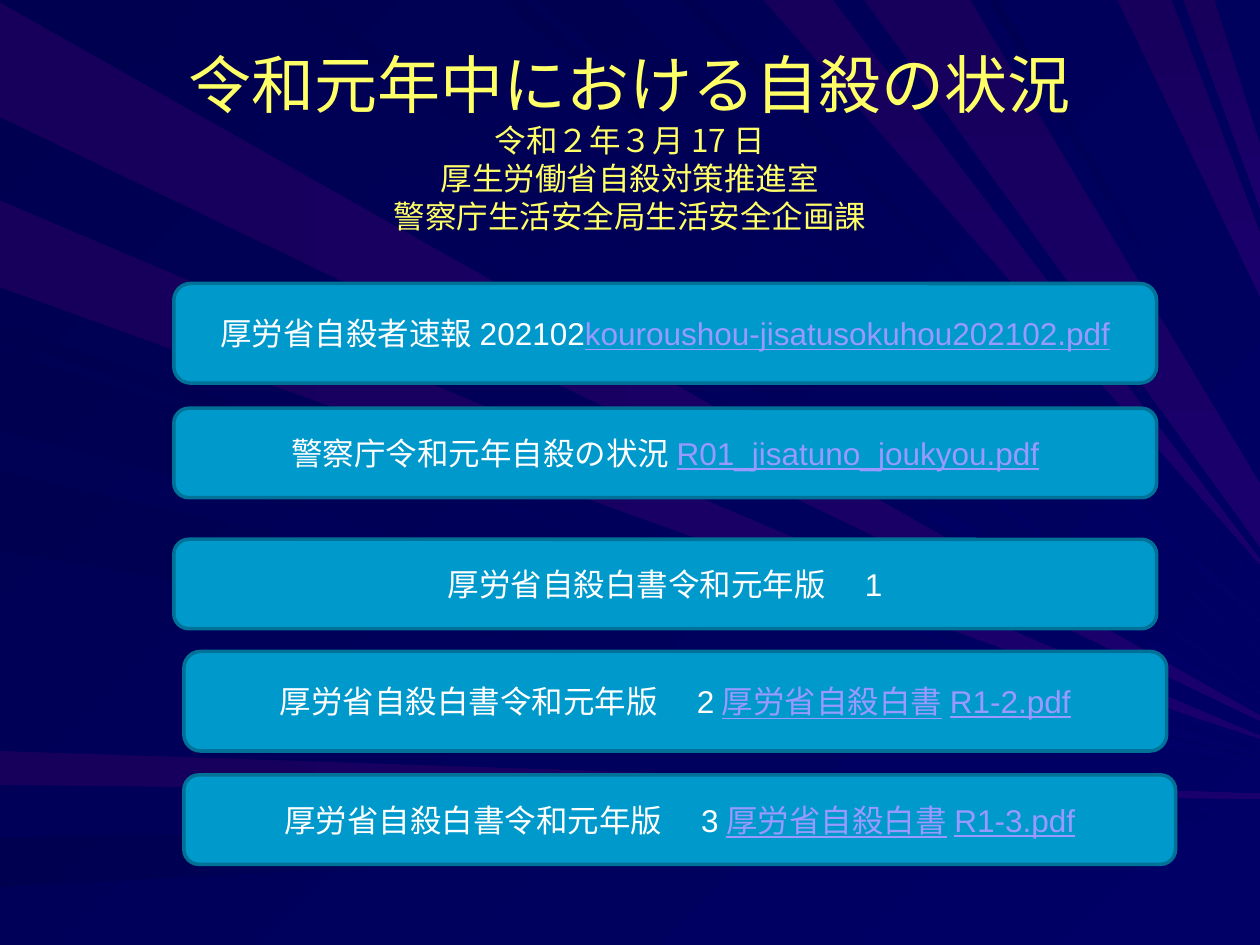
import pptx
import pptx.dml.color
import pptx.enum.shapes
import pptx.enum.text
import pptx.oxml.ns
import pptx.util
from lxml import etree

RGBColor = pptx.dml.color.RGBColor
Inches = pptx.util.Inches
Pt = pptx.util.Pt

NAVY = RGBColor.from_string("000066")
DARK_NAVY = RGBColor.from_string("000050")
PURPLE = RGBColor.from_string("1A006C")
DARK_PURPLE = RGBColor.from_string("16005B")
YELLOW = RGBColor.from_string("FFFF66")
WHITE = RGBColor.from_string("FFFFFF")
LINK = RGBColor.from_string("9999FF")
BUTTON = RGBColor.from_string("0099CC")
BUTTON_EDGE = RGBColor.from_string("007197")

LATIN_FONT = "Arial"
JAPANESE_FONT = "Noto Sans CJK JP"
SLIDE_WIDTH = 10
SLIDE_HEIGHT = 7.5

RAY_GROUPS = [
    {"edge": "left", "spread": 0.02, "colors": (DARK_PURPLE, PURPLE), "angle": 0,
     "rays": [(0.02, 0.93, 5.7), (1.59, 2.28, 5.86), (5.96, 6.23, 6.32)]},
    {"edge": "left", "spread": 0.02, "colors": (DARK_NAVY, NAVY), "angle": 45,
     "rays": [(2.58, 2.7, 5.89), (2.78, 3.42, 6), (3.74, 4.37, 6.05), (6.65, 7.04, 6.47)]},
    {"edge": "top", "spread": 0.02, "colors": (DARK_NAVY, NAVY), "angle": 45,
     "rays": [(0.26, 1.01, 5.63), (2.25, 2.47, 5.5), (3.98, 4.16, 5.18),
              (4.26, 4.92, 4.93), (5.4, 5.52, 4.63), (7.85, 7.92, 3.57)]},
    {"edge": "top", "spread": 0.02, "colors": (DARK_PURPLE, PURPLE), "angle": 90,
     "rays": [(6.06, 6.61, 4.46)]},
    {"edge": "top", "spread": 0.25, "colors": (DARK_PURPLE, PURPLE), "angle": 90,
     "rays": [(6.86, 7.7, 4.09), (8.87, 9.3, 2.1), (9.39, 9.64, 1.4)]},
]

TITLE_LINES = [
    ("令和元年中における自殺の状況", 36),
    ("令和２年３月17日", 18),
    ("厚生労働省自殺対策推進室", 18),
    ("警察庁生活安全局生活安全企画課", 18),
]
LINE_HEIGHT = 1.2

BUTTONS = [
    ((1.38, 2.25, 7.8, 0.79), "厚労省自殺者速報202102", "kouroushou-jisatusokuhou202102.pdf"),
    ((1.38, 3.24, 7.8, 0.71), "警察庁令和元年自殺の状況", "R01_jisatuno_joukyou.pdf"),
    ((1.38, 4.28, 7.8, 0.71), "厚労省自殺白書令和元年版　1", ""),
    ((1.46, 5.17, 7.8, 0.79), "厚労省自殺白書令和元年版　2", "厚労省自殺白書R1-2.pdf"),
    ((1.46, 6.15, 7.87, 0.71), "厚労省自殺白書令和元年版　3", "厚労省自殺白書R1-3.pdf"),
]


def set_fill(fill, colors, angle):
    fill.gradient()
    fill.gradient_angle = -angle % 360
    for stop, color in zip(fill.gradient_stops, colors):
        stop.color.rgb = color


def add_ray(slide, group, near, far, tip):
    if group["edge"] == "left":
        base = [(0, far), (0, near)]
    else:
        base = [(near, 0), (far, 0)]
    tips = [(SLIDE_WIDTH, tip - group["spread"]), (SLIDE_WIDTH, tip + group["spread"])]
    corners = [(Inches(x), Inches(y)) for x, y in base + tips]
    builder = slide.shapes.build_freeform(*corners[0])
    builder.add_line_segments(corners[1:])
    ray = builder.convert_to_shape()
    ray.shadow.inherit = False
    ray.line.fill.background()
    set_fill(ray.fill, group["colors"], group["angle"])


def add_run(paragraph, text, color, **formats):
    run = paragraph.add_run()
    run.text = text
    for name, value in formats.items():
        setattr(run.font, name, value)
    run.font.color.rgb = color
    east_asian = etree.SubElement(run.font._element, pptx.oxml.ns.qn("a:ea"))
    east_asian.set("typeface", JAPANESE_FONT)


def add_title(slide):
    title = slide.shapes.add_textbox(Inches(0.5), Inches(0.3), Inches(9), Inches(1.25))
    frame = title.text_frame
    frame.word_wrap = True
    frame.margin_top = Inches(0.06)
    for index, (text, size) in enumerate(TITLE_LINES):
        paragraph = frame.add_paragraph() if index else frame.paragraphs[0]
        paragraph.alignment = pptx.enum.text.PP_ALIGN.CENTER
        paragraph.line_spacing = Pt(size * LINE_HEIGHT)
        add_run(paragraph, text, YELLOW, name=JAPANESE_FONT, size=Pt(size))


def add_button(slide, place, label, link):
    button = slide.shapes.add_shape(
        pptx.enum.shapes.MSO_SHAPE.ROUNDED_RECTANGLE, *map(Inches, place))
    button.shadow.inherit = False
    button.fill.solid()
    button.fill.fore_color.rgb = BUTTON
    button.line.color.rgb = BUTTON_EDGE
    button.line.width = Pt(2)
    frame = button.text_frame
    frame.word_wrap = True
    frame.vertical_anchor = pptx.enum.text.MSO_ANCHOR.MIDDLE
    paragraph = frame.paragraphs[0]
    paragraph.alignment = pptx.enum.text.PP_ALIGN.CENTER
    formats = {"name": LATIN_FONT, "size": Pt(18)}
    add_run(paragraph, label, WHITE, **formats)
    if link:
        add_run(paragraph, link, LINK, underline=True, **formats)


def main():
    presentation = pptx.Presentation()
    presentation.slide_width = Inches(SLIDE_WIDTH)
    presentation.slide_height = Inches(SLIDE_HEIGHT)
    slide = presentation.slides.add_slide(presentation.slide_layouts[6])
    set_fill(slide.background.fill, (DARK_NAVY, NAVY), 45)
    for group in RAY_GROUPS:
        for ray in group["rays"]:
            add_ray(slide, group, *ray)
    add_title(slide)
    for button in BUTTONS:
        add_button(slide, *button)
    presentation.save("out.pptx")


if __name__ == "__main__":
    main()
